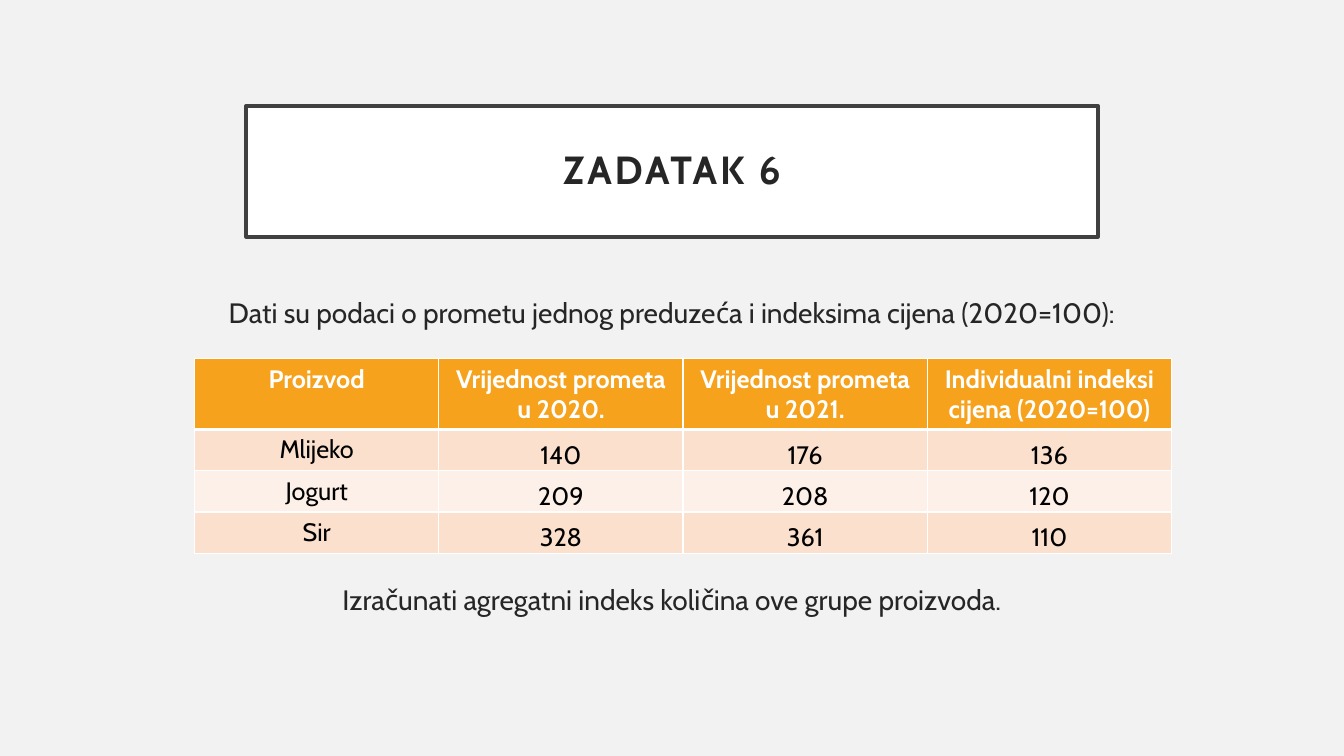
from lxml import etree
from pptx import Presentation
from pptx.dml.color import RGBColor
from pptx.enum import text as t
from pptx.oxml import ns
from pptx.util import Inches, Pt

WHITE = RGBColor(0xFF, 0xFF, 0xFF)
BLACK = RGBColor(0, 0, 0)
PAPER = RGBColor(0xF2, 0xF2, 0xF2)
INK = RGBColor(0x26, 0x26, 0x26)
FRAME = RGBColor(0x40, 0x40, 0x40)
ORANGE = RGBColor(0xF6, 0xA2, 0x1D)
BANDS = [RGBColor(0xFB, 0xE0, 0xCD), RGBColor(0xFD, 0xF0, 0xE8)]

ROWS = [
    ["Proizvod", "Vrijednost prometa u 2020.",
     "Vrijednost prometa u 2021.", "Individualni indeksi cijena (2020=100)"],
    ["Mlijeko", "140", "176", "136"],
    ["Jogurt", "209", "208", "120"],
    ["Sir", "328", "361", "110"],
]
NOTES = [
    (2.88, "Dati su podaci o prometu jednog preduzeća i indeksima cijena (2020=100):"),
    (5.73, "Izračunati agregatni indeks količina ove grupe proizvoda."),
]


def write(frame, words, size, color, bold=False):
    para = frame.paragraphs[0]
    para.alignment = t.PP_ALIGN.CENTER
    run = para.add_run()
    run.text = words
    font = run.font
    font.name, font.size, font.bold = "Cabin", Pt(size), bold
    font.color.rgb = color
    return run


def add_title(slide):
    title = slide.shapes.title
    title.left, title.top = Inches(2.44), Inches(1.05)
    title.width, title.height = Inches(8.45), Inches(1.3)
    title.fill.solid()
    title.fill.fore_color.rgb = WHITE
    title.line.color.rgb = FRAME
    title.line.width = Pt(2.5)
    frame = title.text_frame
    frame.word_wrap = True
    frame.auto_size = t.MSO_AUTO_SIZE.NONE
    frame.vertical_anchor = t.MSO_ANCHOR.MIDDLE
    frame.margin_left = frame.margin_right = Inches(0.2)
    frame.margin_top = frame.margin_bottom = Inches(0.2)
    run = write(frame, "ZADATAK 6", 28, INK, True)
    frame.paragraphs[0].line_spacing = 0.9
    run._r.get_or_add_rPr().set("spc", "200")


def add_note(slide, top, words):
    box = slide.shapes.add_textbox(
        Inches(1.82), Inches(top), Inches(9.69), Inches(0.44))
    box.text_frame.word_wrap = True
    write(box.text_frame, words, 20, INK)


def add_edge(cell, side, width):
    props = cell._tc.get_or_add_tcPr()
    edge = etree.SubElement(props, ns.qn("a:ln" + side), w=str(Pt(width)))
    fill = etree.SubElement(edge, ns.qn("a:solidFill"))
    etree.SubElement(fill, ns.qn("a:srgbClr"), val=str(WHITE))


def style_cell(cell, words, row, col):
    head = row == 0
    for side in "LRTB":
        thick = (head and side == "B") or (row == 1 and side == "T")
        add_edge(cell, side, 3 if thick else 1)
    cell.fill.solid()
    cell.fill.fore_color.rgb = ORANGE if head else BANDS[(row - 1) % 2]
    if not head and col:
        cell.vertical_anchor = t.MSO_ANCHOR.BOTTOM
        cell.margin_left = cell.margin_right = Inches(0.01)
        cell.margin_top, cell.margin_bottom = Inches(0.01), 0
    write(cell.text_frame, words, 18, WHITE if head else BLACK, head)


def add_grid(slide):
    table = slide.shapes.add_table(
        len(ROWS), len(ROWS[0]), Inches(1.93), Inches(3.56),
        Inches(9.69), Inches(1.92)).table
    for row, line in enumerate(ROWS):
        table.rows[row].height = Inches(0.41 if row else 0.7)
        for col, words in enumerate(line):
            style_cell(table.cell(row, col), words, row, col)


def main():
    deck = Presentation()
    deck.slide_width, deck.slide_height = Inches(13.33), Inches(7.5)
    slide = deck.slides.add_slide(deck.slide_layouts[5])
    slide.background.fill.solid()
    slide.background.fill.fore_color.rgb = PAPER
    add_title(slide)
    for top, words in NOTES:
        add_note(slide, top, words)
    add_grid(slide)
    deck.save("out.pptx")


if __name__ == "__main__":
    main()
